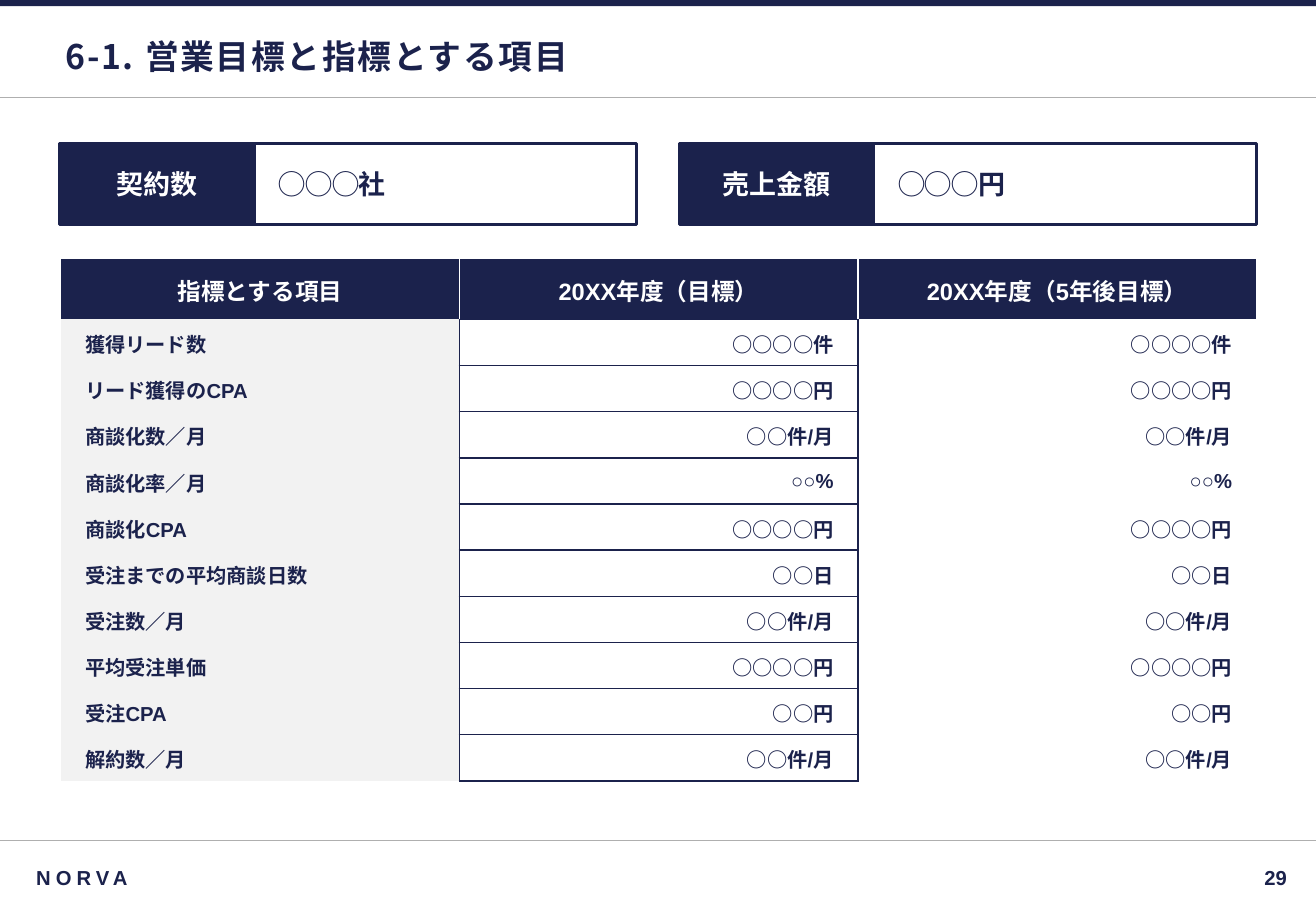
"""Build the slide of sales targets and their indicators."""
from pptx import Presentation
from pptx.dml.color import RGBColor
from pptx.enum.shapes import MSO_CONNECTOR, MSO_SHAPE
from pptx.enum.text import MSO_ANCHOR, PP_ALIGN
from pptx.oxml.ns import qn
from pptx.util import Pt
from lxml.etree import SubElement

TITLE = "6-1. 営業目標と指標とする項目"
COMPANY = "NORVA"
PAGE = "29"
GOALS = [("契約数", "◯◯◯社"), ("売上金額", "◯◯◯円")]
HEADERS = ["指標とする項目", "20XX年度（目標）", "20XX年度（5年後目標）"]
INDICATORS = [
    ("獲得リード数", "○○○○件"),
    ("リード獲得のCPA", "○○○○円"),
    ("商談化数／月", "○○件/月"),
    ("商談化率／月", "○○%"),
    ("商談化CPA", "○○○○円"),
    ("受注までの平均商談日数", "○○日"),
    ("受注数／月", "○○件/月"),
    ("平均受注単価", "○○○○円"),
    ("受注CPA", "○○円"),
    ("解約数／月", "○○件/月"),
]

NAVY = RGBColor(0x1B, 0x22, 0x4C)
WHITE = RGBColor(0xFF, 0xFF, 0xFF)
LIGHT = RGBColor(0xF2, 0xF2, 0xF2)
GREY = RGBColor(0xAF, 0xAF, 0xAF)
LATIN, CJK = "Arial", "Noto Sans CJK JP"

SCALE = 9144
WIDTH, HEIGHT = 1083, 750
GOAL_LEFT, GOAL_TOP, GOAL_HEIGHT, GOAL_STEP = 49, 118, 67, 510
LABEL_WIDTH, VALUE_WIDTH = 160, 315
TABLE_LEFT, TABLE_TOP, COL_WIDTH = 50, 213, 328
HEADER_HEIGHT, ROW_HEIGHT = 50, 38


def px(*lengths):
    return [n * SCALE for n in lengths]


def write(tf, text, size=12, font=LATIN, color=NAVY, align=PP_ALIGN.LEFT, spacing=0):
    p = tf.paragraphs[0]
    p.alignment = align
    r = p.add_run()
    r.text = text
    r.font.size, r.font.bold, r.font.name = Pt(size), True, font
    r.font.color.rgb = color
    rPr = r.font._element
    SubElement(rPr, qn("a:ea")).set("typeface", CJK)
    if spacing:
        rPr.set("spc", str(spacing * 100))


def set_margins(target, side, end):
    target.margin_left = target.margin_right = side * SCALE
    target.margin_top = target.margin_bottom = end * SCALE


def add_label(s, text, box, side=10, end=5, **style):
    tf = s.shapes.add_textbox(*px(*box)).text_frame
    tf.word_wrap = True
    tf.vertical_anchor = MSO_ANCHOR.MIDDLE
    set_margins(tf, side, end)
    write(tf, text, **style)


def add_rect(s, box, fill, outlined=True):
    sp = s.shapes.add_shape(MSO_SHAPE.RECTANGLE, *px(*box))
    sp.shadow.inherit = False
    sp.fill.solid()
    sp.fill.fore_color.rgb = fill
    if outlined:
        sp.line.color.rgb = NAVY
        sp.line.width = Pt(2)
    else:
        sp.line.fill.background()
    tf = sp.text_frame
    tf.word_wrap = True
    tf.vertical_anchor = MSO_ANCHOR.MIDDLE
    return tf


def add_rule(s, y):
    line = s.shapes.add_connector(MSO_CONNECTOR.STRAIGHT, *px(0, y, WIDTH, y))
    line.line.color.rgb = GREY
    line.line.width = Pt(0.75)
    SubElement(line._element.spPr, qn("a:effectLst"))


def set_borders(cell, row, col):
    inner = NAVY if row else WHITE
    edges = {
        "L": inner if col > 0 else None,
        "R": inner if col < 2 else None,
        "T": NAVY if col == 1 and row else None,
        "B": NAVY if col == 1 else None,
    }
    tcPr = cell._tc.get_or_add_tcPr()
    for side, color in edges.items():
        ln = SubElement(tcPr, qn(f"a:ln{side}"), w=str(Pt(1)))
        if color is None:
            SubElement(ln, qn("a:noFill"))
        else:
            fill = SubElement(ln, qn("a:solidFill"))
            SubElement(fill, qn("a:srgbClr"), val=str(color))


def format_cell(cell, text, row, col):
    set_borders(cell, row, col)
    cell.vertical_anchor = MSO_ANCHOR.MIDDLE
    set_margins(cell, 20, 8 if row else 12)
    if row and col:
        cell.fill.background()
    else:
        cell.fill.solid()
        cell.fill.fore_color.rgb = LIGHT if row else NAVY
    if row:
        write(cell.text_frame, text, align=PP_ALIGN.RIGHT if col else PP_ALIGN.LEFT)
    else:
        write(cell.text_frame, text, size=14, color=WHITE, align=PP_ALIGN.CENTER)


def add_indicators(s):
    rows = [HEADERS] + [(name, value, value) for name, value in INDICATORS]
    height = HEADER_HEIGHT + ROW_HEIGHT * len(INDICATORS)
    box = px(TABLE_LEFT, TABLE_TOP, COL_WIDTH * len(HEADERS), height)
    table = s.shapes.add_table(len(rows), len(HEADERS), *box).table
    table.first_row = table.horz_banding = False
    for column in table.columns:
        column.width = COL_WIDTH * SCALE
    for i, row in enumerate(rows):
        table.rows[i].height = (ROW_HEIGHT if i else HEADER_HEIGHT) * SCALE
        for j, text in enumerate(row):
            format_cell(table.cell(i, j), text, i, j)


def add_goals(s):
    for i, (label, value) in enumerate(GOALS):
        x = GOAL_LEFT + i * GOAL_STEP
        tf = add_rect(s, (x, GOAL_TOP, LABEL_WIDTH, GOAL_HEIGHT), NAVY)
        write(tf, label, size=16, font=CJK, color=WHITE, align=PP_ALIGN.CENTER)
        tf = add_rect(s, (x + LABEL_WIDTH, GOAL_TOP, VALUE_WIDTH, GOAL_HEIGHT), WHITE)
        set_margins(tf, 20, 4)
        write(tf, value, size=16, font=CJK)


def main():
    prs = Presentation()
    prs.slide_width, prs.slide_height = px(WIDTH, HEIGHT)
    s = prs.slides.add_slide(prs.slide_layouts[6])
    for y in (692, 80):
        add_rule(s, y)
    add_rect(s, (0, 0, WIDTH, 5), NAVY, outlined=False)
    add_label(s, TITLE, (50, 21, 984, 51), side=4, end=4, size=20, font=CJK, spacing=1)
    add_label(s, COMPANY, (20, 707, 866, 31), spacing=3)
    add_label(s, PAGE, (906, 707, 157, 31), side=4, end=4, align=PP_ALIGN.RIGHT)
    add_indicators(s)
    add_goals(s)
    prs.save("out.pptx")


if __name__ == "__main__":
    main()
